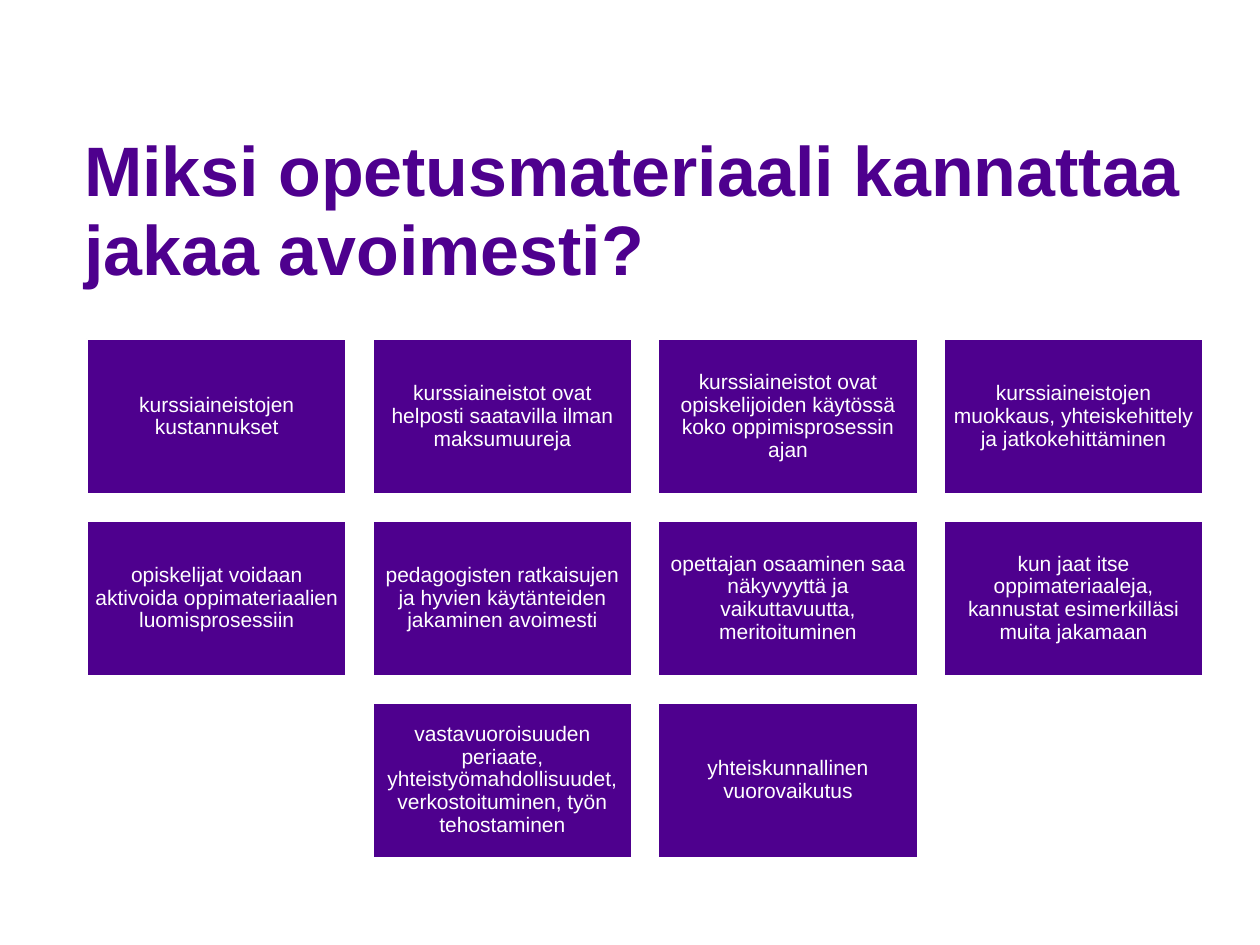
from pptx import Presentation
from pptx.dml.color import RGBColor
from pptx.enum.shapes import MSO_SHAPE
from pptx.enum.text import MSO_ANCHOR, PP_ALIGN
from pptx.util import Pt

RECT = MSO_SHAPE.RECTANGLE
TOP, MIDDLE = MSO_ANCHOR.TOP, MSO_ANCHOR.MIDDLE
LEFT, CENTER = PP_ALIGN.LEFT, PP_ALIGN.CENTER
PURPLE = RGBColor(0x4E, 0x00, 0x8E)
WHITE = RGBColor(0xFF, 0xFF, 0xFF)

COLS = 4
CARD_W, CARD_H, GAP = 148.4, 89, 14.8
GRID_X, GRID_Y = 49.7, 193.7

TITLE = "Miksi opetusmateriaali kannattaa jakaa avoimesti?"
ROWS = [
    [
        "kurssiaineistojen kustannukset",
        "kurssiaineistot ovat helposti saatavilla ilman maksumuureja",
        "kurssiaineistot ovat opiskelijoiden käytössä koko oppimisprosessin ajan",
        "kurssiaineistojen muokkaus, yhteiskehittely ja jatkokehittäminen",
    ],
    [
        "opiskelijat voidaan aktivoida oppimateriaalien luomisprosessiin",
        "pedagogisten ratkaisujen ja hyvien käytänteiden jakaminen avoimesti",
        "opettajan osaaminen saa näkyvyyttä ja vaikuttavuutta, meritoituminen",
        "kun jaat itse oppimateriaaleja, kannustat esimerkilläsi muita jakamaan",
    ],
    [
        "vastavuoroisuuden periaate, yhteistyömahdollisuudet, "
        "verkostoituminen, työn tehostaminen",
        "yhteiskunnallinen vuorovaikutus",
    ],
]


def write(shape, text, size=12, color=WHITE, bold=False, align=CENTER,
          anchor=MIDDLE, inset=(3.6, 3.6), spacing=0.9):
    frame = shape.text_frame
    frame.word_wrap = True
    frame.vertical_anchor = anchor
    frame.margin_left = frame.margin_right = Pt(inset[0])
    frame.margin_top = frame.margin_bottom = Pt(inset[1])
    para = frame.paragraphs[0]
    para.text = text
    para.alignment = align
    para.line_spacing = spacing
    font = para.runs[0].font
    font.name = "Arial"
    font.size = Pt(size)
    font.bold = bold
    font.color.rgb = color


def add_title(slide):
    box = slide.shapes.add_textbox(Pt(41), Pt(72), Pt(646.6), Pt(51))
    write(box, TITLE, size=40, color=PURPLE, bold=True, align=LEFT,
          anchor=TOP, inset=(7.2, 3.6), spacing=0.95)


def add_card(slide, x, y, text):
    card = slide.shapes.add_shape(RECT, Pt(x), Pt(y), Pt(CARD_W), Pt(CARD_H))
    card.shadow.inherit = False
    card.fill.solid()
    card.fill.fore_color.rgb = PURPLE
    card.line.color.rgb = WHITE
    card.line.width = Pt(1.5)
    write(card, text)


def add_grid(slide):
    step = CARD_W + GAP
    for row, texts in enumerate(ROWS):
        start = GRID_X + (COLS - len(texts)) * step / 2
        y = GRID_Y + row * (CARD_H + GAP)
        for col, text in enumerate(texts):
            add_card(slide, start + col * step, y, text)


def main():
    deck = Presentation()
    deck.slide_width, deck.slide_height = Pt(720), Pt(540)
    slide = deck.slides.add_slide(deck.slide_layouts[6])
    add_title(slide)
    add_grid(slide)
    deck.save("out.pptx")


if __name__ == "__main__":
    main()
